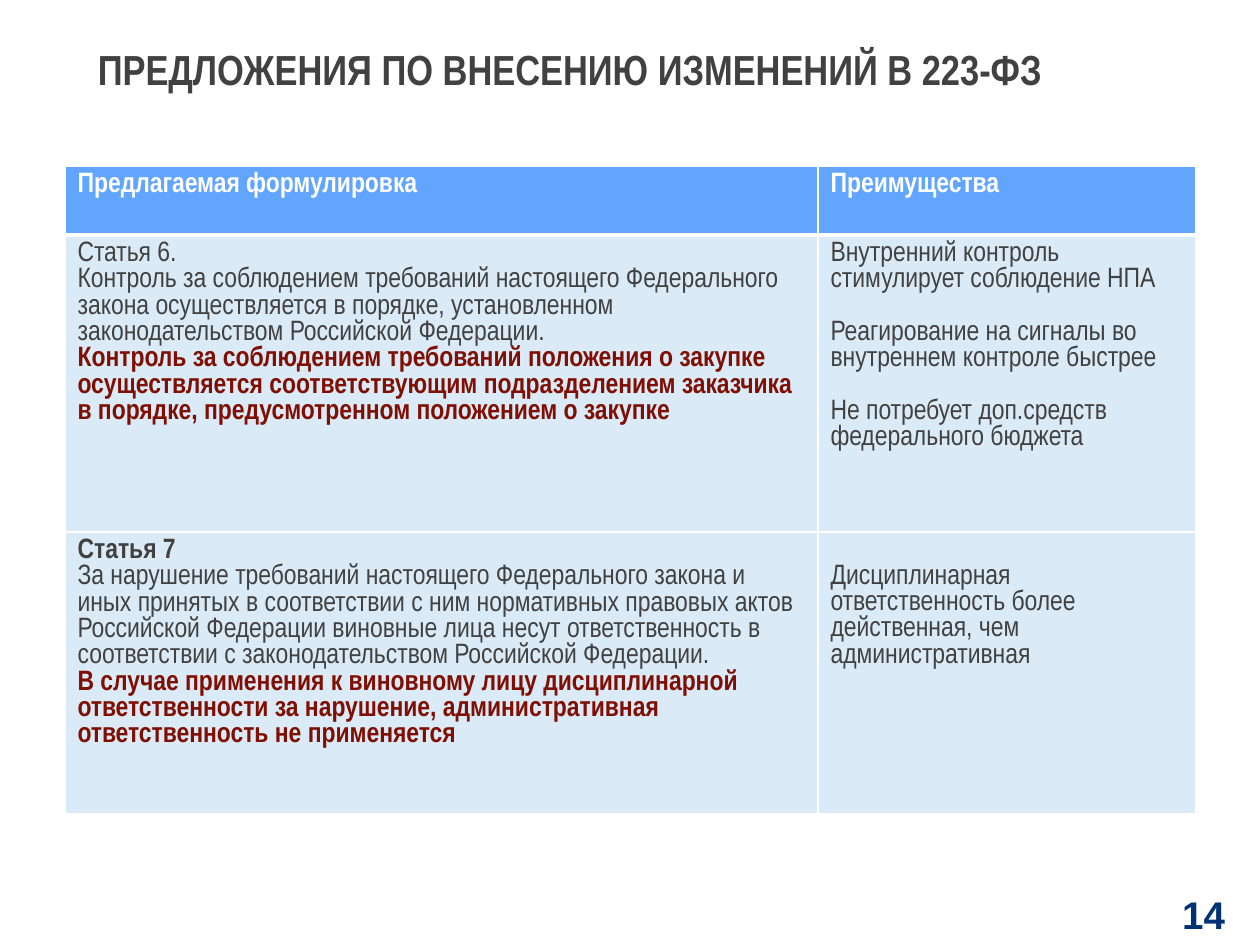
from lxml import etree
from pptx import Presentation
from pptx.dml.color import RGBColor
from pptx.enum.text import MSO_ANCHOR, PP_ALIGN
from pptx.oxml.ns import qn
from pptx.util import Pt

CENTER, RIGHT = PP_ALIGN.CENTER, PP_ALIGN.RIGHT
MIDDLE = MSO_ANCHOR.MIDDLE
WHITE = RGBColor(0xFF, 0xFF, 0xFF)
GRAY = RGBColor(0x41, 0x41, 0x42)
MAROON = RGBColor(0x7F, 0x0F, 0x03)
NAVY = RGBColor(0x00, 0x32, 0x74)
BLUE = RGBColor(0x61, 0xA5, 0xFF)
PALE_BLUE = RGBColor(0xDA, 0xEA, 0xF6)
PX = 914400 / 126


def px(*lengths):
    return [round(length * PX) for length in lengths]


def write(paragraph, text, color, **formats):
    paragraph.text = text
    font = paragraph.runs[0].font
    font.color.rgb = color
    for name, value in formats.items():
        setattr(font, name, value)


HEADER = {"name": "Arial Narrow", "size": Pt(16), "bold": True}
BODY = {**HEADER, "bold": False}

presentation = Presentation()
presentation.slide_width, presentation.slide_height = px(1260, 945)
slide = presentation.slides.add_slide(presentation.slide_layouts[6])

page_number = slide.shapes.add_textbox(*px(1138, 888, 87, 52)).text_frame
for side in ("left", "top", "right", "bottom"):
    setattr(page_number, f"margin_{side}", 0)
page_number.vertical_anchor = MIDDLE
page_number.paragraphs[0].alignment = RIGHT
write(page_number.paragraphs[0], "14", NAVY, name="Arial", size=Pt(22), bold=True)

column_widths = px(753, 378)
row_heights = px(69, 297, 249)
proposals = slide.shapes.add_table(
    3, 2, *px(65, 166), sum(column_widths), sum(row_heights)
).table
for column, width in zip(proposals.columns, column_widths):
    column.width = width
for row, height in zip(proposals.rows, row_heights):
    row.height = height

contents = [
    [
        [("Предлагаемая формулировка", WHITE, HEADER)],
        [("Преимущества", WHITE, HEADER)],
    ],
    [
        [
            ("Статья 6.", GRAY, BODY),
            ("Контроль за соблюдением требований настоящего Федерального закона "
             "осуществляется в порядке, установленном законодательством "
             "Российской Федерации.", GRAY, BODY),
            ("Контроль за соблюдением требований положения о закупке "
             "осуществляется соответствующим подразделением заказчика в порядке, "
             "предусмотренном положением о закупке", MAROON, HEADER),
        ],
        [
            ("Внутренний контроль стимулирует соблюдение НПА", GRAY, BODY),
            ("Реагирование на сигналы во внутреннем контроле быстрее", GRAY, BODY),
            ("Не потребует доп.средств федерального бюджета", GRAY, BODY),
        ],
    ],
    [
        [
            ("Статья 7", GRAY, HEADER),
            ("За нарушение требований настоящего Федерального закона и иных "
             "принятых в соответствии с ним нормативных правовых актов Российской "
             "Федерации виновные лица несут ответственность в соответствии с "
             "законодательством Российской Федерации.", GRAY, BODY),
            ("В случае применения к виновному лицу дисциплинарной ответственности "
             "за нарушение, административная ответственность не применяется",
             MAROON, HEADER),
        ],
        [("Дисциплинарная ответственность более действенная, чем административная",
          GRAY, BODY)],
    ],
]

for row_index, row_contents in enumerate(contents):
    for column_index, statements in enumerate(row_contents):
        cell = proposals.cell(row_index, column_index)
        properties = cell._tc.get_or_add_tcPr()
        for edge in "LRTB":
            thick = (row_index, edge) in ((0, "B"), (1, "T"))
            border = etree.SubElement(
                properties, qn(f"a:ln{edge}"), w=str(Pt(3 if thick else 1))
            )
            border_fill = etree.SubElement(border, qn("a:solidFill"))
            etree.SubElement(border_fill, qn("a:srgbClr"), val=str(WHITE))
        cell.fill.solid()
        cell.fill.fore_color.rgb = PALE_BLUE if row_index else BLUE
        for index, (text, color, formats) in enumerate(statements):
            frame = cell.text_frame
            paragraph = frame.add_paragraph() if index else frame.paragraphs[0]
            if index and column_index:
                paragraph.space_before = Pt(15)
            write(paragraph, text, color, **formats)
proposals.cell(2, 1).margin_top = px(32)[0]

title = slide.shapes.add_textbox(*px(54, 37, 1032, 63)).text_frame
title.word_wrap = True
title.paragraphs[0].alignment = CENTER
write(title.paragraphs[0], "ПРЕДЛОЖЕНИЯ ПО ВНЕСЕНИЮ ИЗМЕНЕНИЙ В 223-ФЗ", GRAY,
      name="Arial Narrow", size=Pt(24), bold=True)

presentation.save("out.pptx")
